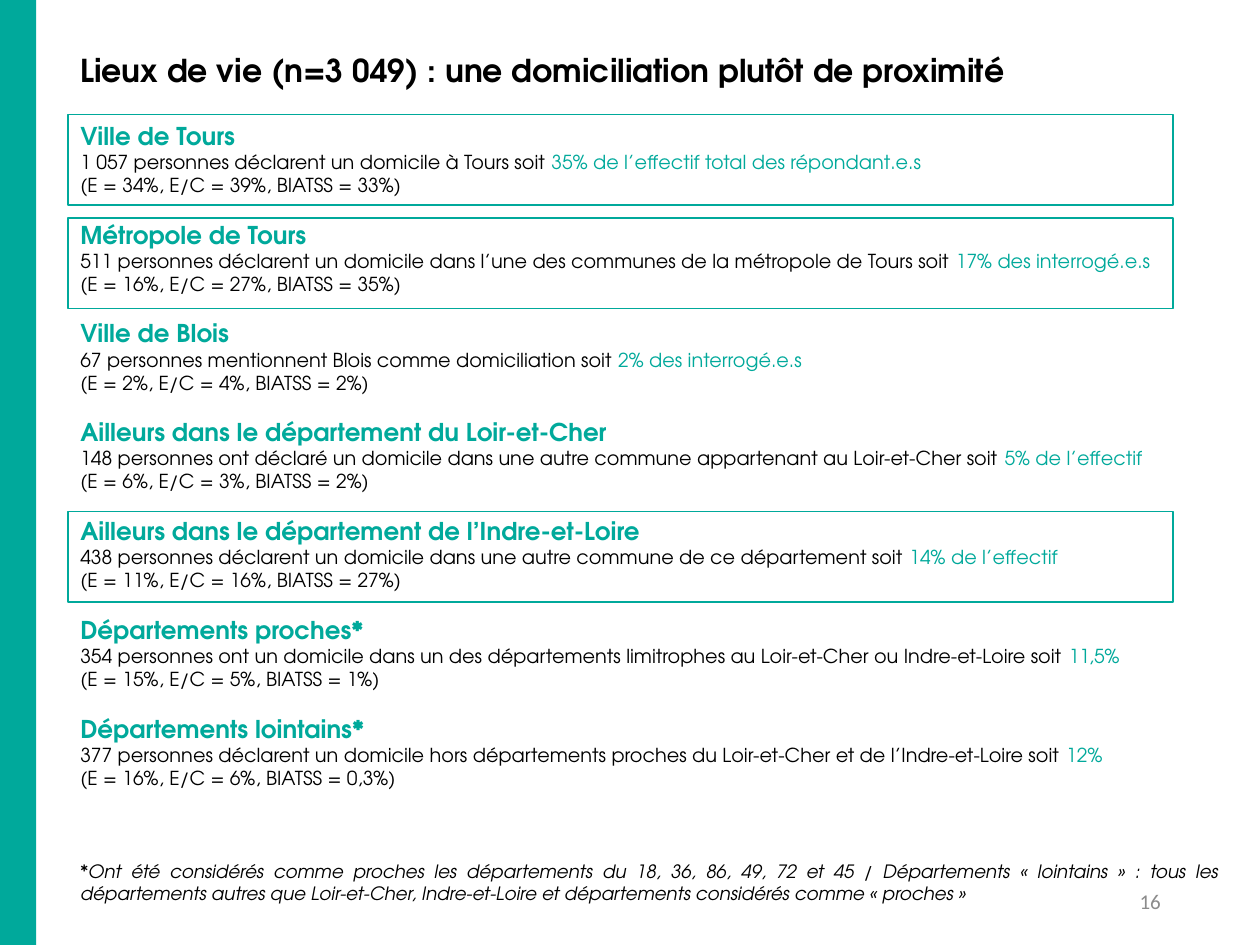
from dataclasses import dataclass

from pptx import Presentation
from pptx import util as u
from pptx.dml.color import RGBColor
from pptx.enum import shapes, text


@dataclass(frozen=True)
class Theme:
    accent: str = "00A99B"
    ink: str = "000000"
    muted: str = "8C8C8C"
    font: str = "TeX Gyre Adventor"
    number_font: str = "Calibri"
    title: float = 18
    heading: float = 14
    body: float = 11
    note: float = 10.5
    number: float = 12
    block_gap: float = 13.25
    frame_line: float = 1


class Page:
    def __init__(self, slide, theme):
        self.slide = slide
        self.theme = theme

    def style(self, span, size, color, font=None, bold=False, italic=False):
        span.font.name = font or self.theme.font
        span.font.size = u.Pt(size)
        span.font.color.rgb = RGBColor.from_string(color)
        span.font.bold = bold
        span.font.italic = italic

    def rectangle(self, left, top, width, height, fill=None, line=None):
        shape = self.slide.shapes.add_shape(
            shapes.MSO_SHAPE.RECTANGLE,
            u.Cm(left), u.Cm(top), u.Cm(width), u.Cm(height))
        shape.shadow.inherit = False
        if fill:
            shape.fill.solid()
            shape.fill.fore_color.rgb = RGBColor.from_string(fill)
        else:
            shape.fill.background()
        if line:
            shape.line.color.rgb = RGBColor.from_string(line)
            shape.line.width = u.Pt(self.theme.frame_line)
        else:
            shape.line.fill.background()

    def text_box(self, left, top, width, height, grow=True):
        box = self.slide.shapes.add_textbox(
            u.Cm(left), u.Cm(top), u.Cm(width), u.Cm(height))
        frame = box.text_frame
        frame.word_wrap = True
        if grow:
            frame.auto_size = text.MSO_AUTO_SIZE.SHAPE_TO_FIT_TEXT
        return frame

    def label(self, frame, words, size, color, align=text.PP_ALIGN.LEFT, **look):
        frame.text = words
        para = frame.paragraphs[0]
        para.alignment = align
        self.style(para.runs[0], size, color, **look)

    def place_list(self, frame, places):
        theme = self.theme
        for index, (heading, sentence, share, detail) in enumerate(places):
            title = frame.add_paragraph() if index else frame.paragraphs[0]
            title.text = heading
            title.space_before = u.Pt(theme.block_gap if index else 0)
            self.style(title.runs[0], theme.heading, theme.accent, bold=True)

            para = frame.add_paragraph()
            para.text = sentence + " soit "
            self.style(para.runs[0], theme.body, theme.ink)
            span = para.add_run()
            span.text = share
            self.style(span, theme.body, theme.accent)

            para = frame.add_paragraph()
            para.text = f"({detail})"
            self.style(para.runs[0], theme.body, theme.ink)


PLACES = [
    ("Ville de Tours",
     "1 057 personnes déclarent un domicile à Tours",
     "35% de l’effectif total des répondant.e.s",
     "E = 34%, E/C = 39%, BIATSS = 33%"),
    ("Métropole de Tours",
     "511 personnes déclarent un domicile dans l’une des communes de la métropole de Tours",
     "17% des interrogé.e.s",
     "E = 16%, E/C = 27%, BIATSS = 35%"),
    ("Ville de Blois",
     "67 personnes mentionnent Blois comme domiciliation",
     "2% des interrogé.e.s",
     "E = 2%, E/C = 4%, BIATSS = 2%"),
    ("Ailleurs dans le département du Loir-et-Cher",
     "148 personnes ont déclaré un domicile dans une autre commune appartenant au Loir-et-Cher",
     "5% de l’effectif",
     "E = 6%, E/C = 3%, BIATSS = 2%"),
    ("Ailleurs dans le département de l’Indre-et-Loire",
     "438 personnes déclarent un domicile dans une autre commune de ce département",
     "14% de l’effectif",
     "E = 11%, E/C = 16%, BIATSS = 27%"),
    ("Départements proches*",
     "354 personnes ont un domicile dans un des départements limitrophes au Loir-et-Cher ou Indre-et-Loire",
     "11,5%",
     "E = 15%, E/C = 5%, BIATSS = 1%"),
    ("Départements lointains*",
     "377 personnes déclarent un domicile hors départements proches du Loir-et-Cher et de l’Indre-et-Loire",
     "12%",
     "E = 16%, E/C = 6%, BIATSS = 0,3%"),
]
NOTE = ("*Ont été considérés comme proches les départements du 18, 36, 86, 49, 72 et 45 / "
        "Départements « lointains » : tous les départements autres que Loir-et-Cher, "
        "Indre-et-Loire et départements considérés comme « proches »")
LEFT, LIST_TOP, LIST_WIDTH, WIDE = 1.37, 2.31, 22.28, 23.47
FRAME_TOPS, FRAME_HEIGHT = (LIST_TOP, 4.39, 10.31), 1.83


def main():
    deck = Presentation()
    deck.slide_width, deck.slide_height = u.Cm(25.4), u.Cm(19.05)
    theme = Theme()
    page = Page(deck.slides.add_slide(deck.slide_layouts[6]), theme)

    page.rectangle(0, 0, 0.73, 19.05, fill=theme.accent)
    page.label(page.text_box(LEFT, 0.91, WIDE, 1.02),
               "Lieux de vie (n=3 049) : une domiciliation plutôt de proximité",
               theme.title, theme.ink, bold=True)
    page.place_list(page.text_box(LEFT, LIST_TOP, LIST_WIDTH, 13.84), PLACES)
    page.label(page.text_box(LEFT, 17.22, WIDE, 1.14), NOTE,
               theme.note, theme.ink, align=text.PP_ALIGN.JUSTIFY, italic=True)
    for top in FRAME_TOPS:
        page.rectangle(LEFT, top, LIST_WIDTH, FRAME_HEIGHT, line=theme.accent)

    number = page.text_box(17.93, 17.65, 5.72, 1.02, grow=False)
    number.vertical_anchor = text.MSO_ANCHOR.MIDDLE
    page.label(number, "16", theme.number, theme.muted,
               align=text.PP_ALIGN.RIGHT, font=theme.number_font)

    deck.save("out.pptx")


if __name__ == "__main__":
    main()
